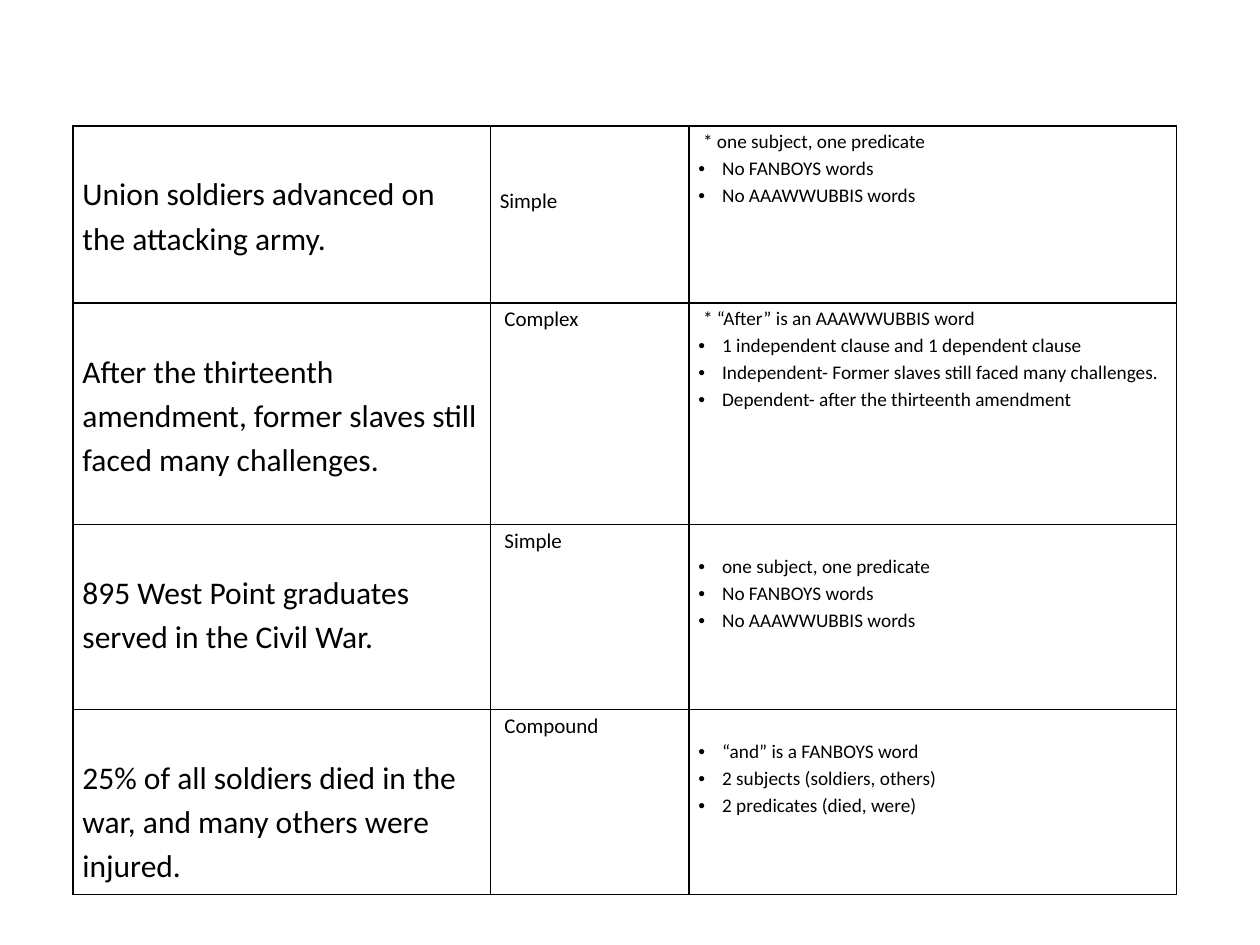
from dataclasses import dataclass

from lxml.etree import SubElement
from pptx import Presentation
from pptx.dml.color import RGBColor
from pptx.oxml.ns import qn
from pptx.table import _Cell as Cell
from pptx.util import Pt

FONT = "Calibri"
BLACK = "000000"
LINE_SPACING = 1.15
SENTENCE_SIZE, KIND_SIZE, NOTE_SIZE = 18, 12, 11
COLUMN_WIDTHS = (238.5, 113.5, 278.5)
SIDE_MARGIN = 5.4
SMALL_INDENT = 2.6
BULLET_INDENT = 13.5


@dataclass
class SentenceRow:
    sentence: str
    kind: str
    bullets: tuple[str, ...]
    height: float
    lead_note: str = ""
    kind_lines_above: int = 0


ROWS = (
    SentenceRow(
        "Union soldiers advanced on the attacking army.",
        "Simple",
        ("No FANBOYS words", "No AAAWWUBBIS words"),
        101.2,
        lead_note="* one subject, one predicate",
        kind_lines_above=2,
    ),
    SentenceRow(
        "After the thirteenth amendment, former slaves still faced many challenges.",
        "Complex",
        (
            "1 independent clause and 1 dependent clause",
            "Independent- Former slaves still faced many challenges.",
            "Dependent- after the thirteenth amendment",
        ),
        126.4,
        lead_note="* “After” is an AAAWWUBBIS word",
    ),
    SentenceRow(
        "895 West Point graduates served in the Civil War.",
        "Simple",
        ("one subject, one predicate", "No FANBOYS words", "No AAAWWUBBIS words"),
        105.8,
    ),
    SentenceRow(
        "25% of all soldiers died in the war, and many others were injured.",
        "Compound",
        (
            "“and” is a FANBOYS word",
            "2 subjects (soldiers, others)",
            "2 predicates (died, were)",
        ),
        105.8,
    ),
)


def color(value: str) -> RGBColor:
    return RGBColor.from_string(value)


def line_height(size: float) -> float:
    return size * 1.22 * LINE_SPACING


def format_cell(cell: Cell, top: float = 0) -> None:
    cell.margin_left = cell.margin_right = Pt(SIDE_MARGIN)
    cell.margin_top, cell.margin_bottom = Pt(top), Pt(0)
    properties = cell._tc.get_or_add_tcPr()
    for side in ("a:lnL", "a:lnR", "a:lnT", "a:lnB"):
        line = SubElement(properties, qn(side), w=str(Pt(1)))
        fill = SubElement(line, qn("a:solidFill"))
        SubElement(fill, qn("a:srgbClr"), val=BLACK)
    cell.fill.background()


def add_text(cell: Cell, text: str, *, size: float, indent: float = 0,
             bullet: bool = False) -> None:
    frame = cell.text_frame
    paragraph = frame.paragraphs[0] if not frame.text else frame.add_paragraph()
    properties = paragraph._p.get_or_add_pPr()
    properties.set("marL", str(Pt(indent)))
    properties.set("indent", str(Pt(-indent if bullet else 0)))
    if bullet:
        SubElement(properties, qn("a:buFont"), typeface="Arial")
        SubElement(properties, qn("a:buChar"), char="•")
    paragraph.line_spacing = LINE_SPACING
    run = paragraph.add_run()
    run.text = text
    run.font.name = FONT
    run.font.size = Pt(size)
    run.font.color.rgb = color(BLACK)


def fill_row(cells: list[Cell], row: SentenceRow) -> None:
    sentence_cell, kind_cell, note_cell = cells

    format_cell(sentence_cell, line_height(SENTENCE_SIZE))
    add_text(sentence_cell, row.sentence, size=SENTENCE_SIZE)

    format_cell(kind_cell, row.kind_lines_above * line_height(KIND_SIZE))
    kind_indent = 0 if row.kind_lines_above else SMALL_INDENT
    add_text(kind_cell, row.kind, size=KIND_SIZE, indent=kind_indent)

    format_cell(note_cell, 0 if row.lead_note else line_height(NOTE_SIZE))
    if row.lead_note:
        add_text(note_cell, row.lead_note, size=NOTE_SIZE, indent=SMALL_INDENT)
    for bullet in row.bullets:
        add_text(note_cell, bullet, size=NOTE_SIZE, indent=BULLET_INDENT, bullet=True)


def main() -> None:
    presentation = Presentation()
    presentation.slide_width, presentation.slide_height = Pt(720), Pt(540)
    slide = presentation.slides.add_slide(presentation.slide_layouts[6])
    table = slide.shapes.add_table(
        len(ROWS), len(COLUMN_WIDTHS), Pt(41.75), Pt(72),
        Pt(sum(COLUMN_WIDTHS)), Pt(sum(row.height for row in ROWS)),
    ).table
    table.first_row = table.horz_banding = False
    for column, width in zip(table.columns, COLUMN_WIDTHS):
        column.width = Pt(width)
    for table_row, row in zip(table.rows, ROWS):
        table_row.height = Pt(row.height)
        fill_row(list(table_row.cells), row)
    presentation.save("out.pptx")


if __name__ == "__main__":
    main()
